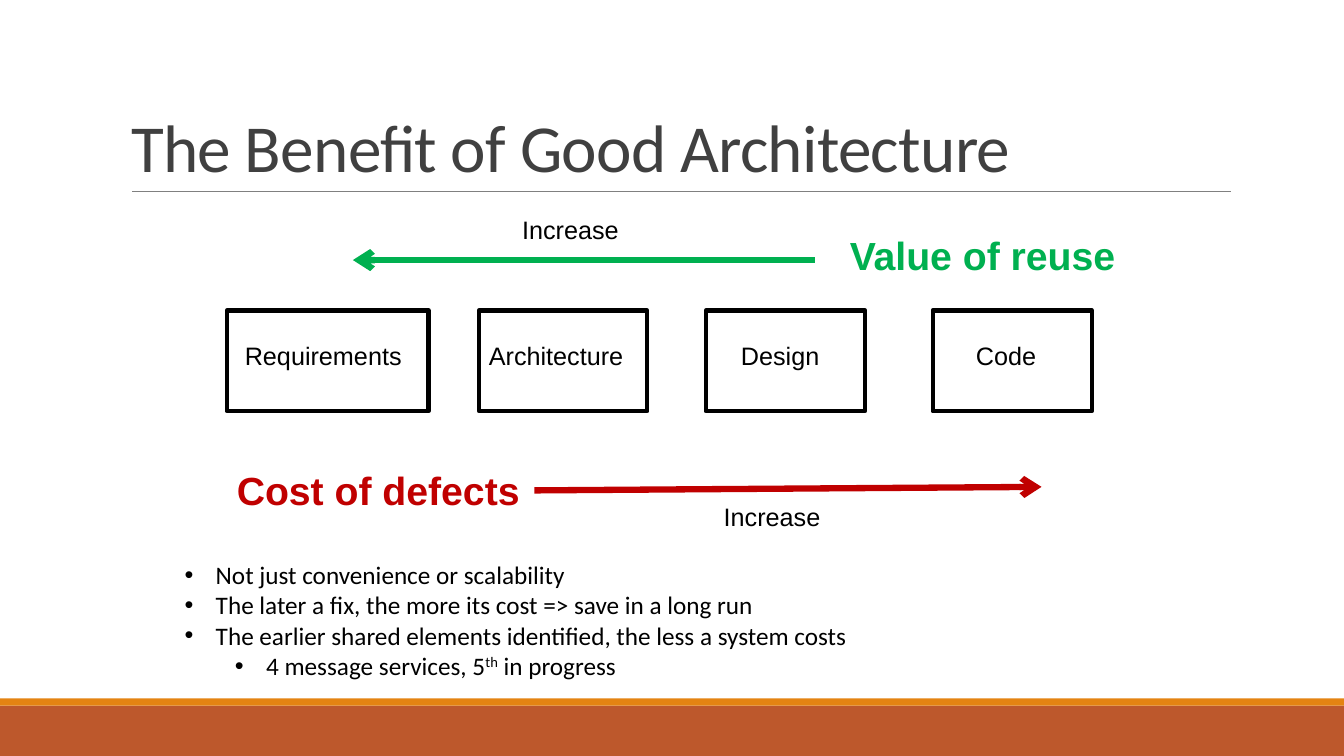
from dataclasses import dataclass

from lxml.etree import SubElement
from pptx import Presentation
from pptx.dml.color import RGBColor
from pptx.enum.shapes import MSO_CONNECTOR as Connector, MSO_SHAPE as Shape
from pptx.enum.text import MSO_ANCHOR as Anchor, MSO_AUTO_SIZE as AutoSize, PP_ALIGN as Align
from pptx.oxml.ns import qn
from pptx.util import Inches, Pt


@dataclass(frozen=True)
class Theme:
    heading_font: str = "Calibri"
    label_font: str = "Arial"
    title_size: int = 48
    emphasis_size: int = 28
    text_size: int = 18
    title: str = "404040"
    text: str = "000000"
    value: str = "00B050"
    cost: str = "C00000"
    rule: str = "808080"
    band: str = "BD582C"
    stripe: str = "E48312"


THEME = Theme()

PHASES = [
    ("Requirements", 2.25, 2, 2.33, 1.77),
    ("Architecture", 4.75, 1.67, 4.75, 1.55),
    ("Design", 7, 1.58, 7.25, 0.99),
    ("Code", 9.25, 1.58, 9.58, 0.81),
]

BENEFITS = [
    (0, [("Not just convenience or scalability", False)]),
    (0, [("The later a fix, the more its cost => save in a long run", False)]),
    (0, [("The earlier shared elements identified, the less a system costs", False)]),
    (1, [("4 message services, 5", False), ("th", True), (" in progress", False)]),
]


def color(value):
    return RGBColor.from_string(value)


def place(shape, left, top, width, height):
    shape.left, shape.top = Inches(left), Inches(top)
    shape.width, shape.height = Inches(width), Inches(height)


def add_run(paragraph, text, font, size, fill, bold=False):
    run = paragraph.add_run()
    run.text = text
    run.font.name = font
    run.font.size = Pt(size)
    run.font.bold = bold
    run.font.color.rgb = color(fill)
    return run


def add_rectangle(slide, left, top, width, height, fill=None):
    shape = slide.shapes.add_shape(
        Shape.RECTANGLE, Inches(left), Inches(top), Inches(width), Inches(height))
    shape.shadow.inherit = False
    if fill:
        shape.fill.solid()
        shape.fill.fore_color.rgb = color(fill)
        shape.line.fill.background()
    else:
        shape.fill.background()
        shape.line.color.rgb = color(THEME.text)
        shape.line.width = Pt(3)


def add_line(slide, start, end, fill, width, arrow=False):
    line = slide.shapes.add_connector(
        Connector.STRAIGHT, *(Inches(value) for value in (*start, *end)))
    line.line.color.rgb = color(fill)
    line.line.width = Pt(width)
    if arrow:
        SubElement(line.line._get_or_add_ln(), qn("a:tailEnd"), type="arrow")
    SubElement(line._element.spPr, qn("a:effectLst"))
    return line


def add_label(slide, text, left, top, width, height=0.4,
              size=THEME.text_size, fill=THEME.text, bold=False):
    box = slide.shapes.add_textbox(
        Inches(left), Inches(top), Inches(width), Inches(height))
    box.text_frame.word_wrap = False
    add_run(box.text_frame.paragraphs[0], text, THEME.label_font, size, fill, bold)
    return box


def add_emphasis(slide, text, left, top, width, fill):
    return add_label(slide, text, left, top, width, 0.57, THEME.emphasis_size, fill, True)


def fill_title(title, text):
    place(title, 1.2, 0.31, 11, 1.59)
    frame = title.text_frame
    frame.auto_size = AutoSize.NONE
    frame.vertical_anchor = Anchor.BOTTOM
    paragraph = frame.paragraphs[0]
    paragraph.alignment = Align.LEFT
    paragraph.line_spacing = 0.85
    run = add_run(paragraph, text, THEME.heading_font, THEME.title_size, THEME.title)
    run.font._element.set("spc", "-50")


def add_bullet(paragraph, level):
    properties = paragraph._p.get_or_add_pPr()
    properties.set("marL", str(Inches(0.31 + 0.5 * level)))
    properties.set("indent", str(Inches(-0.31)))
    SubElement(properties, qn("a:buFont"), typeface="Arial")
    SubElement(properties, qn("a:buChar"), char="•")


def fill_list(body, items):
    place(body, 1.73, 5.5, 6.85, 1.31)
    frame = body.text_frame
    frame.auto_size = AutoSize.NONE
    frame.vertical_anchor = Anchor.TOP
    frame.word_wrap = False
    for index, (level, parts) in enumerate(items):
        paragraph = frame.add_paragraph() if index else frame.paragraphs[0]
        paragraph.level = level
        add_bullet(paragraph, level)
        paragraph.space_before = Pt(0)
        for text, superscript in parts:
            run = add_run(paragraph, text, THEME.heading_font, THEME.text_size, THEME.text)
            if superscript:
                run.font._element.set("baseline", "30000")


def main():
    presentation = Presentation()
    presentation.slide_width = Inches(13.33)
    presentation.slide_height = Inches(7.5)
    slide = presentation.slides.add_slide(presentation.slide_layouts[1])

    add_rectangle(slide, 0, 7, 13.33, 0.5, THEME.band)
    add_rectangle(slide, 0, 6.93, 13.33, 0.07, THEME.stripe)
    add_line(slide, (1.31, 1.9), (12.21, 1.9), THEME.rule, 0.5)
    fill_title(slide.shapes.title, "The Benefit of Good Architecture")

    for name, left, width, label_left, label_width in PHASES:
        add_rectangle(slide, left, 3.08, width, 1)
        add_label(slide, name, label_left, 3.33, label_width)

    add_emphasis(slide, "Value of reuse", 8.33, 2.25, 2.87, THEME.value)
    add_line(slide, (8.08, 2.58), (3.5, 2.58), THEME.value, 4.5, arrow=True)
    add_label(slide, "Increase", 5.08, 2.08, 1.17)

    cost = add_emphasis(slide, "Cost of defects", 2.25, 4.58, 3.05, THEME.cost)
    cost_arrow = add_line(slide, (5.3, 4.87), (10.33, 4.83), THEME.cost, 4.5, arrow=True)
    cost_arrow.begin_connect(cost, 3)
    add_label(slide, "Increase", 7.08, 4.92, 1.17)

    fill_list(slide.placeholders[1], BENEFITS)
    presentation.save("out.pptx")


if __name__ == "__main__":
    main()
